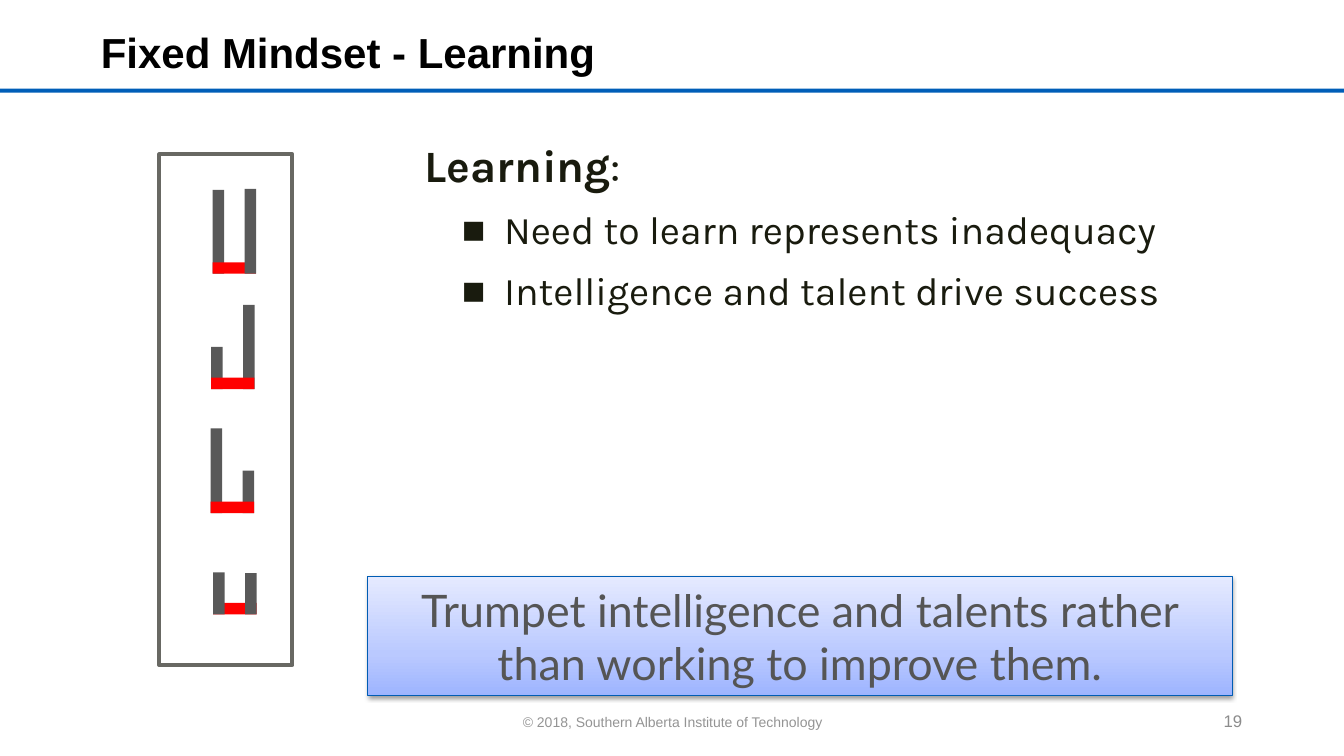
from dataclasses import dataclass
from typing import NamedTuple

from lxml import etree
from pptx import Presentation
from pptx.dml.color import RGBColor
from pptx.enum.shapes import MSO_SHAPE
from pptx.enum.text import MSO_ANCHOR, MSO_AUTO_SIZE, PP_ALIGN
from pptx.oxml import parse_xml
from pptx.oxml.ns import nsdecls, qn
from pptx.util import Emu, Inches, Pt

RECT = MSO_SHAPE.RECTANGLE
TOP, MIDDLE = MSO_ANCHOR.TOP, MSO_ANCHOR.MIDDLE
LEFT, CENTER, RIGHT = PP_ALIGN.LEFT, PP_ALIGN.CENTER, PP_ALIGN.RIGHT
COL = ROW = Inches(0.1)
COLS, ROWS = 133.3, 75


@dataclass(frozen=True)
class Theme:
    rule: str = "005EB8"
    title: str = "000000"
    body: str = "191B0E"
    frame: str = "686863"
    bar: str = "595959"
    base: str = "FF0000"
    callout: str = "555555"
    callout_line: str = "005CB4"
    callout_stops: tuple = ((0, "9DB4FF"), (35, "BAC9FF"), (100, "E5EAFF"))
    footer: str = "949494"
    number: str = "8C8C8C"
    title_size: int = 30
    head_size: int = 32
    list_size: int = 28
    number_size: int = 12
    footer_size: int = 10


class Box(NamedTuple):
    left: float
    top: float
    width: float
    height: float


class Figure(NamedTuple):
    left: float
    bottom: float
    left_height: float
    right_height: float
    order: str


T = Theme()
THICK = 1.13
FIGURE_WIDTH = 4.3
FIGURES = (
    Figure(21.1, 27.15, 8.3, 8.4, "left base right"),
    Figure(20.95, 38.6, 4.2, 8.35, "right left base"),
    Figure(20.9, 50.9, 8.4, 4.2, "left right base"),
    Figure(21.15, 60.95, 4.15, 4.1, "base right left"),
)
POINTS = ("Need to learn represents inadequacy", "Intelligence and talent drive success")


def place(box: Box) -> tuple:
    return (Emu(round(box.left * COL)), Emu(round(box.top * ROW)),
            Emu(round(box.width * COL)), Emu(round(box.height * ROW)))


def move(sp, box: Box) -> None:
    sp.left, sp.top, sp.width, sp.height = place(box)


def rect(shapes, box: Box, fill: str = "", line: str = "", weight: float = 0):
    sp = shapes.add_shape(RECT, *place(box))
    sp.shadow.inherit = False
    if fill:
        sp.fill.solid()
        sp.fill.fore_color.rgb = RGBColor.from_string(fill)
    else:
        sp.fill.background()
    if line:
        sp.line.color.rgb = RGBColor.from_string(line)
        sp.line.width = Pt(weight)
    else:
        sp.line.fill.background()
    return sp


def write(p, text: str, *, size: float, color: str, font: str = "Arial",
          bold: bool = False, align=LEFT) -> None:
    p.alignment = align
    r = p.add_run()
    r.text = text
    r.font.name = font
    r.font.size = Pt(size)
    r.font.bold = bold
    r.font.color.rgb = RGBColor.from_string(color)


def frame_text(sp, anchor=TOP):
    tf = sp.text_frame
    tf.word_wrap = True
    tf.auto_size = MSO_AUTO_SIZE.NONE
    tf.vertical_anchor = anchor
    return tf


def bullet(p, char: str) -> None:
    pPr = p._p.get_or_add_pPr()
    pPr.set("marL", str(Inches(0.79)))
    pPr.set("indent", str(Inches(-0.42)))
    etree.SubElement(pPr, qn("a:buFont")).set("typeface", "Arial")
    etree.SubElement(pPr, qn("a:buChar")).set("char", char)


def draw_title(s) -> None:
    sp = s.shapes.title
    move(sp, Box(9, 1.7, 97.8, 7.5))
    p = frame_text(sp, MIDDLE).paragraphs[0]
    p.line_spacing = 0.9
    write(p, "Fixed Mindset - Learning", size=T.title_size, color=T.title, bold=True)


def draw_body(s) -> None:
    sp = s.placeholders[1]
    move(sp, Box(41.1, 13.6, 82.6, 38.2))
    tf = frame_text(sp)
    p = tf.paragraphs[0]
    pPr = p._p.get_or_add_pPr()
    pPr.set("marL", "0")
    pPr.set("indent", "0")
    etree.SubElement(pPr, qn("a:buNone"))
    write(p, "Learning", size=T.head_size, color=T.body, font="Karla", bold=True)
    write(p, ":", size=T.head_size, color=T.body, font="Karla")
    for point in POINTS:
        p = tf.add_paragraph()
        p.level = 1
        bullet(p, "■")
        write(p, point, size=T.list_size, color=T.body, font="Karla")
    for i, p in enumerate(tf.paragraphs):
        p.line_spacing = 0.94
        p.space_before = Pt(10 if i else 0)
        p.space_after = Pt(2)


def draw_label(s, box: Box, text: str, *, anchor=TOP, **fmt) -> None:
    sp = s.shapes.add_textbox(*place(box))
    write(frame_text(sp, anchor).paragraphs[0], text, **fmt)


def draw_figure(s, fig: Figure) -> None:
    right = fig.left + FIGURE_WIDTH - THICK
    parts = {
        "left": (Box(fig.left, fig.bottom - fig.left_height, THICK, fig.left_height), T.bar),
        "right": (Box(right, fig.bottom - fig.right_height, THICK, fig.right_height), T.bar),
        "base": (Box(fig.left, fig.bottom - THICK, FIGURE_WIDTH, THICK), T.base),
    }
    group = s.shapes.add_group_shape()
    for name in fig.order.split():
        rect(group.shapes, *parts[name])


def draw_callout(s) -> None:
    sp = rect(s.shapes, Box(36.5, 57.2, 85.7, 11.8), T.rule, T.callout_line, 0.75)
    spPr = sp._element.spPr
    stops = "".join(f'<a:gs pos="{pos * 1000}"><a:srgbClr val="{color}"/></a:gs>'
                    for pos, color in T.callout_stops)
    spPr.replace(spPr.find(qn("a:solidFill")), parse_xml(
        f'<a:gradFill {nsdecls("a")} rotWithShape="1"><a:gsLst>{stops}</a:gsLst>'
        '<a:lin ang="16200000" scaled="0"/></a:gradFill>'))
    spPr.find(qn("a:effectLst")).append(parse_xml(
        f'<a:outerShdw {nsdecls("a")} blurRad="{Pt(3.1)}" dist="{Pt(1.6)}" dir="5400000" '
        'rotWithShape="0"><a:srgbClr val="000000"><a:alpha val="38000"/></a:srgbClr>'
        '</a:outerShdw>'))
    write(frame_text(sp, MIDDLE).paragraphs[0],
          "Trumpet intelligence and talents rather than working to improve them.",
          size=T.head_size, color=T.callout, font="Lato", align=CENTER)


def main() -> None:
    prs = Presentation()
    prs.slide_width, prs.slide_height = round(COLS * COL), ROWS * ROW
    s = prs.slides.add_slide(prs.slide_layouts[1])
    rect(s.shapes, Box(0, 8.8, COLS, 0.4), T.rule)
    draw_title(s)
    draw_body(s)
    draw_label(s, Box(44.3, 70.3, 44.8, 2.7), "© 2018, Southern Alberta Institute of Technology",
               size=T.footer_size, color=T.footer, align=CENTER)
    draw_label(s, Box(94.2, 69.5, 30, 4), "19", anchor=MIDDLE,
               size=T.number_size, color=T.number, align=RIGHT)
    rect(s.shapes, Box(15.8, 15.3, 13.2, 50.7), line=T.frame, weight=2.75)
    draw_callout(s)
    for fig in FIGURES:
        draw_figure(s, fig)
    prs.save("out.pptx")


if __name__ == "__main__":
    main()
